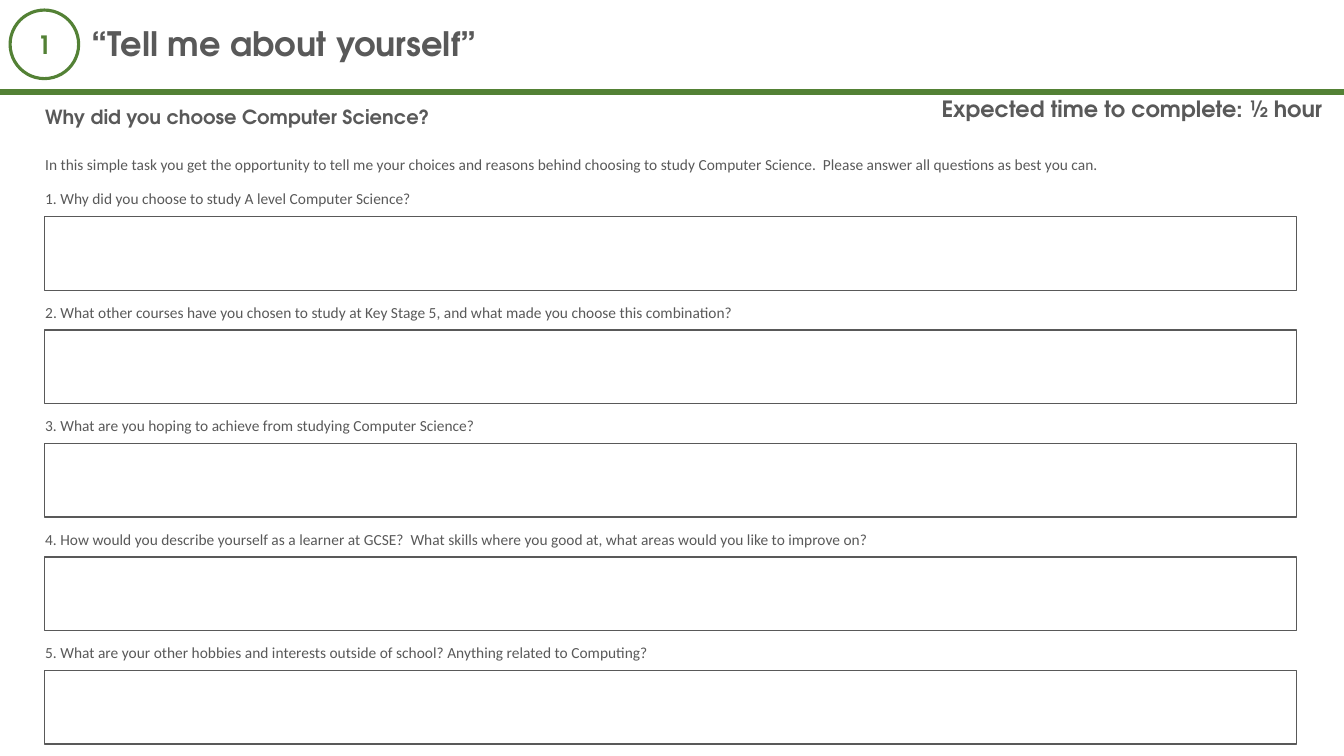
from dataclasses import dataclass

from lxml.etree import SubElement
from pptx import Presentation
from pptx.dml.color import RGBColor
from pptx.enum.shapes import MSO_CONNECTOR as Connector, MSO_SHAPE as Preset
from pptx.enum.text import MSO_ANCHOR as Anchor, PP_ALIGN as Align
from pptx.oxml.ns import qn
from pptx.shapes.autoshape import Shape
from pptx.slide import Slide
from pptx.util import Inches, Pt


@dataclass(frozen=True)
class Theme:
    green: RGBColor = RGBColor(0x53, 0x81, 0x35)
    grey: RGBColor = RGBColor(0x59, 0x59, 0x59)
    heading_font: str = "TeX Gyre Adventor"
    body_font: str = "Calibri"
    title_size: float = 24
    badge_size: float = 18
    time_size: float = 16
    subtitle_size: float = 13.9
    body_size: float = 11


THEME = Theme()


@dataclass(frozen=True)
class Area:
    left: float
    top: float
    width: float
    height: float

    def lengths(self) -> tuple[int, int, int, int]:
        return (Inches(self.left), Inches(self.top),
                Inches(self.width), Inches(self.height))


@dataclass(frozen=True)
class Label:
    text: str
    area: Area
    size: float = THEME.body_size
    heading: bool = False
    line_spacing: float = 1.0
    anchor: Anchor = Anchor.TOP


@dataclass(frozen=True)
class Question:
    text: str
    width: float


SLIDE_WIDTH, SLIDE_HEIGHT = 13.33, 7.5
RULE_TOP = 0.91
TEXT_LEFT, TEXT_HEIGHT = 0.35, 0.29
FIRST_QUESTION_TOP, LAST_QUESTION_TOP = 1.83, 6.33
ANSWER_LEFT, ANSWER_OFFSET = 0.44, 0.32
ANSWER_WIDTH, ANSWER_HEIGHT = 12.42, 0.73

LABELS = [
    Label("Expected time to complete: ½ hour", Area(9.24, 0.93, 4.09, 0.4),
          THEME.time_size, heading=True, line_spacing=0.9),
    Label("“Tell me about yourself”", Area(0.81, 0.09, 10.31, 0.73),
          THEME.title_size, heading=True, line_spacing=0.9, anchor=Anchor.MIDDLE),
    Label("Why did you choose Computer Science?", Area(TEXT_LEFT, 0.99, 4.17, 0.4),
          THEME.subtitle_size, heading=True, line_spacing=0.7, anchor=Anchor.MIDDLE),
    Label("In this simple task you get the opportunity to tell me your choices and "
          "reasons behind choosing to study Computer Science.  Please answer all "
          "questions as best you can.", Area(TEXT_LEFT, 1.49, 10.7, TEXT_HEIGHT)),
]

QUESTIONS = [
    Question("Why did you choose to study A level Computer Science?", 6.67),
    Question("What other courses have you chosen to study at Key Stage 5, "
             "and what made you choose this combination?", 7.71),
    Question("What are you hoping to achieve from studying Computer Science?", 6.67),
    Question("How would you describe yourself as a learner at GCSE?  What skills "
             "where you good at, what areas would you like to improve on?", 10.54),
    Question("What are your other hobbies and interests outside of school? "
             "Anything related to Computing?", 10.54),
]


def add_label(page: Slide, label: Label) -> None:
    frame = page.shapes.add_textbox(*label.area.lengths()).text_frame
    frame.word_wrap = True
    frame.vertical_anchor = label.anchor
    frame.text = label.text
    para = frame.paragraphs[0]
    para.line_spacing = label.line_spacing
    font = para.runs[0].font
    font.name = THEME.heading_font if label.heading else THEME.body_font
    font.size = Pt(label.size)
    font.bold = label.heading
    font.color.rgb = THEME.grey


def add_outline(page: Slide, preset: Preset, area: Area,
                color: RGBColor, weight: float) -> Shape:
    """Add an unfilled preset shape."""
    shape = page.shapes.add_shape(preset, *area.lengths())
    shape.shadow.inherit = False
    shape.fill.background()
    shape.line.color.rgb = color
    shape.line.width = Pt(weight)
    return shape


def add_header_rule(page: Slide) -> None:
    rule = page.shapes.add_connector(
        Connector.STRAIGHT, 0, Inches(RULE_TOP), Inches(SLIDE_WIDTH), Inches(RULE_TOP))
    rule.line.color.rgb = THEME.green
    rule.line.width = Pt(4.5)
    SubElement(rule._element.spPr, qn("a:effectLst"))


def add_badge(page: Slide, number: str) -> None:
    badge = add_outline(page, Preset.OVAL, Area(0.1, 0.1, 0.68, 0.68), THEME.green, 2.25)
    frame = badge.text_frame
    frame.vertical_anchor = Anchor.MIDDLE
    frame.text = number
    para = frame.paragraphs[0]
    para.alignment = Align.CENTER
    font = para.runs[0].font
    font.name = THEME.heading_font
    font.size = Pt(THEME.badge_size)
    font.bold = True
    font.color.rgb = THEME.green


def add_questions(page: Slide, questions: list[Question]) -> None:
    """Stack the numbered questions evenly, each above its answer box."""
    pitch = (LAST_QUESTION_TOP - FIRST_QUESTION_TOP) / (len(questions) - 1)
    for index, question in enumerate(questions):
        top = FIRST_QUESTION_TOP + index * pitch
        answer = Area(ANSWER_LEFT, top + ANSWER_OFFSET, ANSWER_WIDTH, ANSWER_HEIGHT)
        add_outline(page, Preset.RECTANGLE, answer, THEME.grey, 1)
        add_label(page, Label(f"{index + 1}. {question.text}",
                              Area(TEXT_LEFT, top, question.width, TEXT_HEIGHT)))


def main() -> None:
    deck = Presentation()
    deck.slide_width, deck.slide_height = Inches(SLIDE_WIDTH), Inches(SLIDE_HEIGHT)
    page = deck.slides.add_slide(deck.slide_layouts[6])
    add_header_rule(page)
    add_badge(page, "1")
    for label in LABELS:
        add_label(page, label)
    add_questions(page, QUESTIONS)
    deck.save("out.pptx")


if __name__ == "__main__":
    main()
